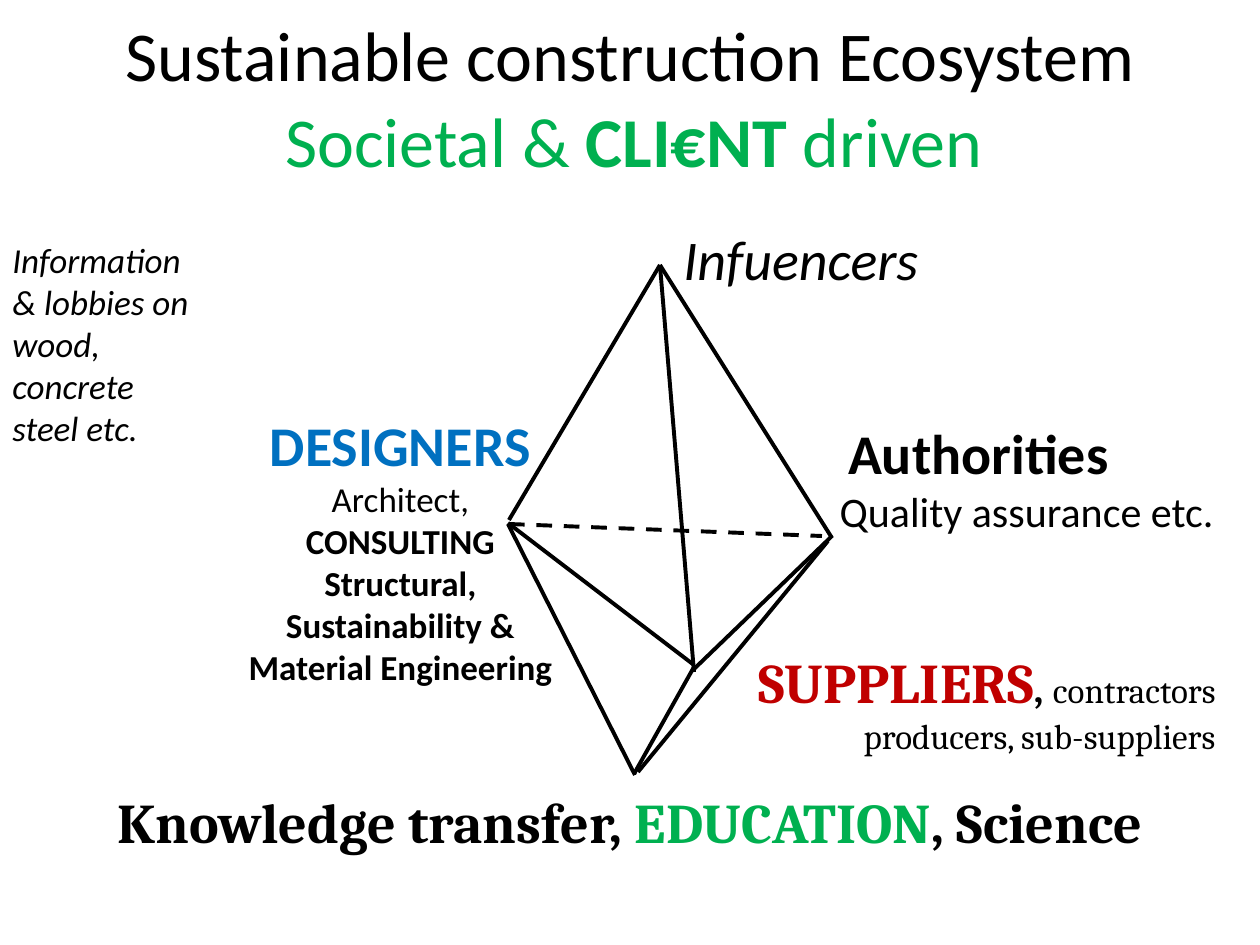
"""Build the sustainable construction ecosystem slide."""
from lxml import etree
from pptx import Presentation
from pptx.dml.color import RGBColor
from pptx.enum.dml import MSO_LINE
from pptx.enum.shapes import MSO_CONNECTOR
from pptx.enum.text import MSO_ANCHOR, PP_ALIGN
from pptx.oxml.ns import qn
from pptx.util import Emu, Pt

LEFT, CENTER, RIGHT = PP_ALIGN.LEFT, PP_ALIGN.CENTER, PP_ALIGN.RIGHT
TOP, MIDDLE = MSO_ANCHOR.TOP, MSO_ANCHOR.MIDDLE
STRAIGHT, DASH = MSO_CONNECTOR.STRAIGHT, MSO_LINE.DASH
SCALE = 914400 / 126
COLORS = {"black": "000000", "green": "00B050", "blue": "0070C0", "red": "C00000"}


def run(text, size, color="black", bold=False, italic=False):
    return text, size, color, bold, italic


TEXTS = [
    dict(box=(0, 4, 1260, 98), anchor=MIDDLE, paras=[
        (CENTER, [run("Sustainable construction Ecosystem", 40)])]),
    dict(box=(4, 91, 1260, 111), paras=[
        (CENTER, [run("Societal & ", 40, "green"),
                  run("CLI€NT ", 40, "green", bold=True),
                  run("driven", 40, "green")])]),
    dict(box=(217, 404, 367, 292), paras=[
        (CENTER, [run("DESIGNERS\n", 32, "blue", bold=True),
                  run("Architect,\n", 20),
                  run("CONSULTING\nStructural,", 20, bold=True)]),
        (CENTER, [run("Sustainability &", 20, bold=True)]),
        (CENTER, [run("Material Engineering", 20, bold=True)])]),
    dict(box=(728, 641, 500, 135), font="Cambria", paras=[
        (RIGHT, [run("SUPPLIERS", 32, "red", bold=True),
                 run(", ", 24, bold=True),
                 run("contractors", 20)]),
        (RIGHT, [run("producers, sub-suppliers", 20)])]),
    dict(box=(0, 781, 1260, 81), font="Cambria", paras=[
        (CENTER, [run("Knowledge transfer, ", 32, bold=True),
                  run("EDUCATION", 32, "green", bold=True),
                  run(", Science", 32, bold=True)])]),
    dict(box=(731, 412, 495, 120), paras=[
        (CENTER, [run("Authorities", 32, bold=True)]),
        (RIGHT, [run("Quality assurance etc.", 24)])]),
    dict(box=(644, 218, 287, 81), paras=[
        (RIGHT, [run("Infuencers", 32, italic=True)])]),
    dict(box=(0, 232, 210, 224), paras=[
        (LEFT, [run(line, 20, italic=True)])
        for line in ("Information", "& lobbies on wood,", "concrete", "steel etc.")]),
]

EDGES = [
    (832, 536, 693, 670),
    (509, 520, 660, 265),
    (660, 265, 694, 672),
    (660, 265, 832, 538),
    (508, 523, 694, 665),
    (828, 541, 638, 772),
    (508, 524, 635, 775),
    (694, 667, 634, 774),
]
HIDDEN_EDGE = (509, 524, 822, 536)


def px(*values):
    return [Emu(round(v * SCALE)) for v in values]


def add_text(slide, box, paras, font="Calibri", anchor=TOP):
    tf = slide.shapes.add_textbox(*px(*box)).text_frame
    tf.word_wrap = True
    tf.vertical_anchor = anchor
    for i, (align, runs) in enumerate(paras):
        p = tf.add_paragraph() if i else tf.paragraphs[0]
        p.alignment = align
        for text, size, color, bold, italic in runs:
            for j, part in enumerate(text.split("\n")):
                if j:
                    p.add_line_break()
                if part:
                    r = p.add_run()
                    r.text = part
                    r.font.name, r.font.size = font, Pt(size)
                    r.font.bold, r.font.italic = bold, italic
                    r.font.color.rgb = RGBColor.from_string(COLORS[color])


def add_edge(slide, points, dash=None):
    line = slide.shapes.add_connector(STRAIGHT, *px(*points))
    line.line.color.rgb = RGBColor.from_string(COLORS["black"])
    line.line.width = Pt(2.25)
    if dash:
        line.line.dash_style = dash
    etree.SubElement(line._element.spPr, qn("a:effectLst"))


def main():
    prs = Presentation()
    prs.slide_width, prs.slide_height = px(1260, 945)
    slide = prs.slides.add_slide(prs.slide_layouts[6])
    for edge in EDGES:
        add_edge(slide, edge)
    add_edge(slide, HIDDEN_EDGE, DASH)
    for text in TEXTS:
        add_text(slide, **text)
    prs.save("out.pptx")


if __name__ == "__main__":
    main()
